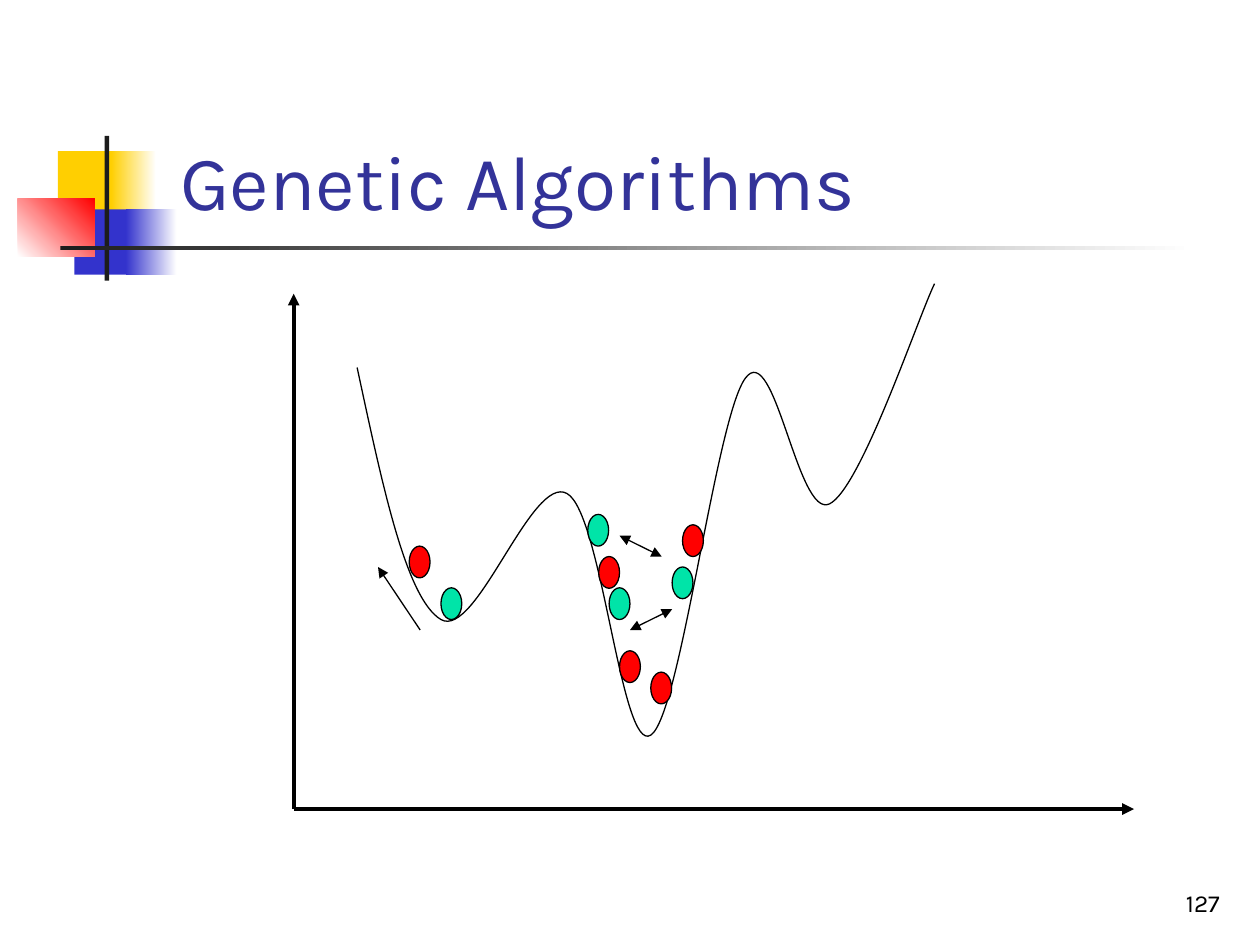
from lxml import etree
from pptx import Presentation
from pptx.dml.color import RGBColor
from pptx.enum.shapes import MSO_CONNECTOR, MSO_SHAPE
from pptx.enum.text import MSO_ANCHOR, PP_ALIGN
from pptx.oxml.ns import qn
from pptx.util import Cm, Pt

RECT, OVAL = MSO_SHAPE.RECTANGLE, MSO_SHAPE.OVAL
STRAIGHT = MSO_CONNECTOR.STRAIGHT
BOTTOM = MSO_ANCHOR.BOTTOM
LEFT, RIGHT = PP_ALIGN.LEFT, PP_ALIGN.RIGHT

BLACK = RGBColor(0x00, 0x00, 0x00)
WHITE = RGBColor(0xFF, 0xFF, 0xFF)
YELLOW = RGBColor(0xFF, 0xCF, 0x01)
BLUE = RGBColor(0x33, 0x33, 0xCC)
RED = RGBColor(0xFF, 0x00, 0x00)
GREEN = RGBColor(0x00, 0xE4, 0xA8)
CHARCOAL = RGBColor(0x1C, 0x1C, 0x1C)
INDIGO = RGBColor(0x33, 0x33, 0x99)


def write(sp, text, size, color, align=LEFT):
    tf = sp.text_frame
    tf.word_wrap = True
    tf.vertical_anchor = BOTTOM
    p = tf.paragraphs[0]
    p.alignment = align
    r = p.add_run()
    r.text = text
    r.font.name = "Karla"
    r.font.size = Pt(size)
    r.font.color.rgb = color


prs = Presentation()
prs.slide_width, prs.slide_height = Cm(25.4), Cm(19.05)
s = prs.slides.add_slide(prs.slide_layouts[5])

# Corner ornament: left, top, width, height, colours, gradient angle
ornament = [
    (1.17, 3.05, 1.22, 1.32, [YELLOW], 0),
    (2.24, 3.05, 0.91, 1.32, [YELLOW, WHITE], 0),
    (1.5, 4.22, 1.17, 1.32, [BLUE], 0),
    (2.54, 4.22, 1.02, 1.32, [BLUE, WHITE], 0),
    (0.36, 4.01, 1.55, 1.17, [WHITE, RED], 45),
    (2.11, 2.74, 0.09, 2.92, [CHARCOAL], 0),
    (1.22, 4.95, 22.86, 0.09, [CHARCOAL, WHITE], 0),
]
for x, y, w, h, colors, angle in ornament:
    sp = s.shapes.add_shape(RECT, Cm(x), Cm(y), Cm(w), Cm(h))
    sp.shadow.inherit = False
    sp.line.fill.background()
    if len(colors) == 1:
        sp.fill.solid()
        sp.fill.fore_color.rgb = colors[0]
    else:
        sp.fill.gradient()
        sp.fill.gradient_angle = angle
        for stop, color in zip(sp.fill.gradient_stops, colors):
            stop.color.rgb = color

# Title and page number
title = s.shapes.title
title.left, title.top, title.width, title.height = Cm(3.38), Cm(2.39), Cm(21.64), Cm(2.29)
write(title, "Genetic Algorithms", 44, INDIGO)
number = s.shapes.add_textbox(Cm(19.56), Cm(17.35), Cm(5.28), Cm(1.27))
write(number, "127", 14, BLACK, align=RIGHT)

# Fitness curve: a start point, then two control points and an end point per segment
start, *points = [
    (7.2, 7.41),
    (7.7, 9.73), (8.18, 12.07), (8.89, 12.49),
    (9.6, 12.9), (10.72, 9.55), (11.43, 9.95),
    (12.14, 10.34), (12.52, 15.21), (13.12, 14.82),
    (13.72, 14.43), (14.43, 8.41), (15.03, 7.62),
    (15.62, 6.83), (16.08, 10.46), (16.72, 10.16),
    (17.35, 9.86), (18.49, 6.45), (18.84, 5.72),
]
builder = s.shapes.build_freeform(Cm(start[0]), Cm(start[1]))
builder.add_line_segments([(Cm(x), Cm(y)) for x, y in points], close=False)
curve = builder.convert_to_shape()
curve.shadow.inherit = False
curve.fill.background()
curve.line.color.rgb = BLACK
curve.line.width = Pt(0.75)
path_el = curve.element.find(".//" + qn("a:path"))
segments = path_el.findall(qn("a:lnTo"))
for i in range(0, len(segments), 3):
    bezier = etree.SubElement(path_el, qn("a:cubicBezTo"))
    for segment in segments[i:i + 3]:
        bezier.append(segment[0])
        path_el.remove(segment)

# Individuals of the population
individuals = {
    GREEN: [(11.85, 10.37), (8.89, 11.85), (12.28, 11.85), (13.55, 11.43)],
    RED: [(13.12, 13.55), (12.49, 13.12), (8.25, 11.01), (12.07, 11.22), (13.76, 10.58)],
}
for color, places in individuals.items():
    for x, y in places:
        sp = s.shapes.add_shape(OVAL, Cm(x), Cm(y), Cm(0.42), Cm(0.64))
        sp.shadow.inherit = False
        sp.fill.solid()
        sp.fill.fore_color.rgb = color
        sp.line.color.rgb = BLACK
        sp.line.width = Pt(0.75)

# Axes, then mutation and crossover arrows: from, to, width, arrowheads
arrows = [
    (5.92, 5.92, 5.92, 16.31, 2.25, ["headEnd"]),
    (5.92, 16.31, 22.86, 16.31, 2.25, ["tailEnd"]),
    (8.47, 12.7, 7.62, 11.43, 0.75, ["tailEnd"]),
    (12.7, 12.7, 13.55, 12.28, 0.75, ["headEnd", "tailEnd"]),
    (12.49, 10.8, 13.34, 11.22, 0.75, ["headEnd", "tailEnd"]),
]
for x1, y1, x2, y2, width, ends in arrows:
    line = s.shapes.add_connector(STRAIGHT, Cm(x1), Cm(y1), Cm(x2), Cm(y2))
    line.line.color.rgb = BLACK
    line.line.width = Pt(width)
    sp_pr = line.element.spPr
    for end in ends:
        etree.SubElement(sp_pr.find(qn("a:ln")), qn("a:" + end), type="triangle")
    etree.SubElement(sp_pr, qn("a:effectLst"))

prs.save("out.pptx")
